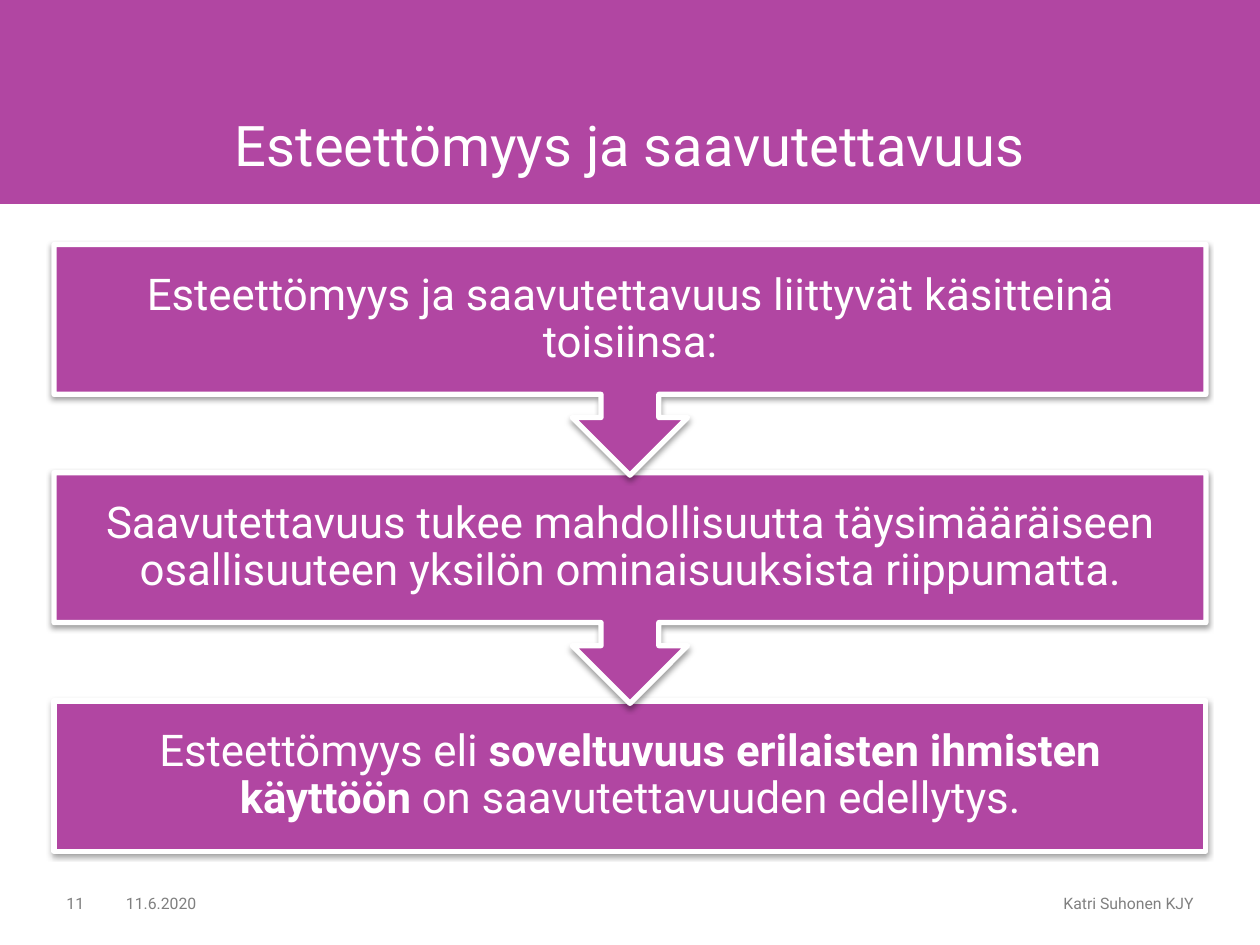
from dataclasses import dataclass

from lxml.etree import SubElement
from pptx import Presentation
from pptx.dml.color import RGBColor
from pptx.enum.shapes import MSO_SHAPE
from pptx.enum.text import MSO_ANCHOR, PP_ALIGN
from pptx.oxml.ns import qn
from pptx.util import Cm, Pt


@dataclass(frozen=True)
class Theme:
    font: str = "Roboto"
    purple: RGBColor = RGBColor(0xB1, 0x46, 0xA2)
    white: RGBColor = RGBColor(0xFF, 0xFF, 0xFF)
    gray: RGBColor = RGBColor(0x80, 0x80, 0x80)
    title_size: Pt = Pt(32)
    step_size: Pt = Pt(25)
    footer_size: Pt = Pt(9)


@dataclass(frozen=True)
class Box:
    left: float
    top: float
    width: float
    height: float

    def lengths(self):
        return Cm(self.left), Cm(self.top), Cm(self.width), Cm(self.height)


THEME = Theme()
MARGIN = 1.09
CONTENT_WIDTH = 23.22

# Each step is a list of (text, bold) runs
STEPS = [
    [("Esteettömyys ja saavutettavuus liittyvät käsitteinä toisiinsa:", False)],
    [("Saavutettavuus tukee mahdollisuutta täysimääräiseen osallisuuteen "
      "yksilön ominaisuuksista riippumatta.", False)],
    [("Esteettömyys eli ", False),
     ("soveltuvuus erilaisten ihmisten käyttöön ", True),
     ("on saavutettavuuden edellytys.", False)],
]


def write_text(shape, runs, size, color, alignment, anchor, insets):
    """Fill a shape with one paragraph; insets are (horizontal, vertical) in cm."""
    frame = shape.text_frame
    frame.word_wrap = True
    frame.vertical_anchor = anchor
    frame.margin_left = frame.margin_right = Cm(insets[0])
    frame.margin_top = frame.margin_bottom = Cm(insets[1])
    paragraph = frame.paragraphs[0]
    paragraph.alignment = alignment
    paragraph.line_spacing = 0.9
    paragraph.font.name = THEME.font
    paragraph.font.size = size
    paragraph.font.color.rgb = color
    for text, bold in runs:
        run = paragraph.add_run()
        run.text = text
        if bold:
            run.font.bold = True


def add_filled_shape(slide, kind, box):
    shape = slide.shapes.add_shape(kind, *box.lengths())
    shape.shadow.inherit = False
    shape.fill.solid()
    shape.fill.fore_color.rgb = THEME.purple
    return shape


def add_soft_shadow(shape):
    effects = shape._element.spPr.find(qn("a:effectLst"))
    shadow = SubElement(effects, qn("a:outerShdw"), blurRad=str(Pt(3.1)),
                        dist=str(Pt(1.6)), dir="5400000", rotWithShape="0")
    color = SubElement(shadow, qn("a:srgbClr"), val="000000")
    SubElement(color, qn("a:alpha"), val="38000")


def build_header(slide, box):
    band = add_filled_shape(slide, MSO_SHAPE.RECTANGLE, box)
    band.line.fill.background()
    title_box = Box(box.left + MARGIN, box.top + 0.91, CONTENT_WIDTH, 2.79)
    title = slide.shapes.add_textbox(*title_box.lengths())
    write_text(title, [("Esteettömyys ja saavutettavuus", False)],
               THEME.title_size, THEME.white, PP_ALIGN.CENTER,
               MSO_ANCHOR.BOTTOM, (0.79, 0.1))


def build_steps(slide, box):
    step_height, callout_height, pitch = 3.03, 4.65, 4.6
    last = len(STEPS) - 1
    # Bottom step first, so that each arrow tip lies over the step below
    for index in range(last, -1, -1):
        is_last = index == last
        kind = MSO_SHAPE.RECTANGLE if is_last else MSO_SHAPE.DOWN_ARROW_CALLOUT
        height = step_height if is_last else callout_height
        step = add_filled_shape(slide, kind, Box(
            box.left, box.top + index * pitch, box.width, height))
        step.line.color.rgb = THEME.white
        step.line.width = Pt(3)
        add_soft_shadow(step)
        write_text(step, STEPS[index], THEME.step_size, THEME.white,
                   PP_ALIGN.CENTER, MSO_ANCHOR.MIDDLE, (0.48, 0.48))


def build_footer(slide, box):
    # Slide number, date and author side by side
    fields = [
        ("11", 1.2, PP_ALIGN.LEFT),
        ("11.6.2020", 5.2, PP_ALIGN.LEFT),
        ("Katri Suhonen KJY", box.width - 6.4, PP_ALIGN.RIGHT),
    ]
    left = box.left
    for text, width, alignment in fields:
        field = slide.shapes.add_textbox(
            *Box(left, box.top, width, box.height).lengths())
        write_text(field, [(text, False)], THEME.footer_size, THEME.gray,
                   alignment, MSO_ANCHOR.MIDDLE, (0.25, 0.13))
        left += width


def main():
    presentation = Presentation()
    presentation.slide_width = Cm(25.4)
    presentation.slide_height = Cm(19.05)
    slide = presentation.slides.add_slide(presentation.slide_layouts[6])
    build_header(slide, Box(0, 0, 25.4, 4.11))
    build_steps(slide, Box(MARGIN, 4.93, CONTENT_WIDTH, 12.23))
    build_footer(slide, Box(MARGIN, 17.93, CONTENT_WIDTH, 0.61))
    presentation.save("out.pptx")


if __name__ == "__main__":
    main()
